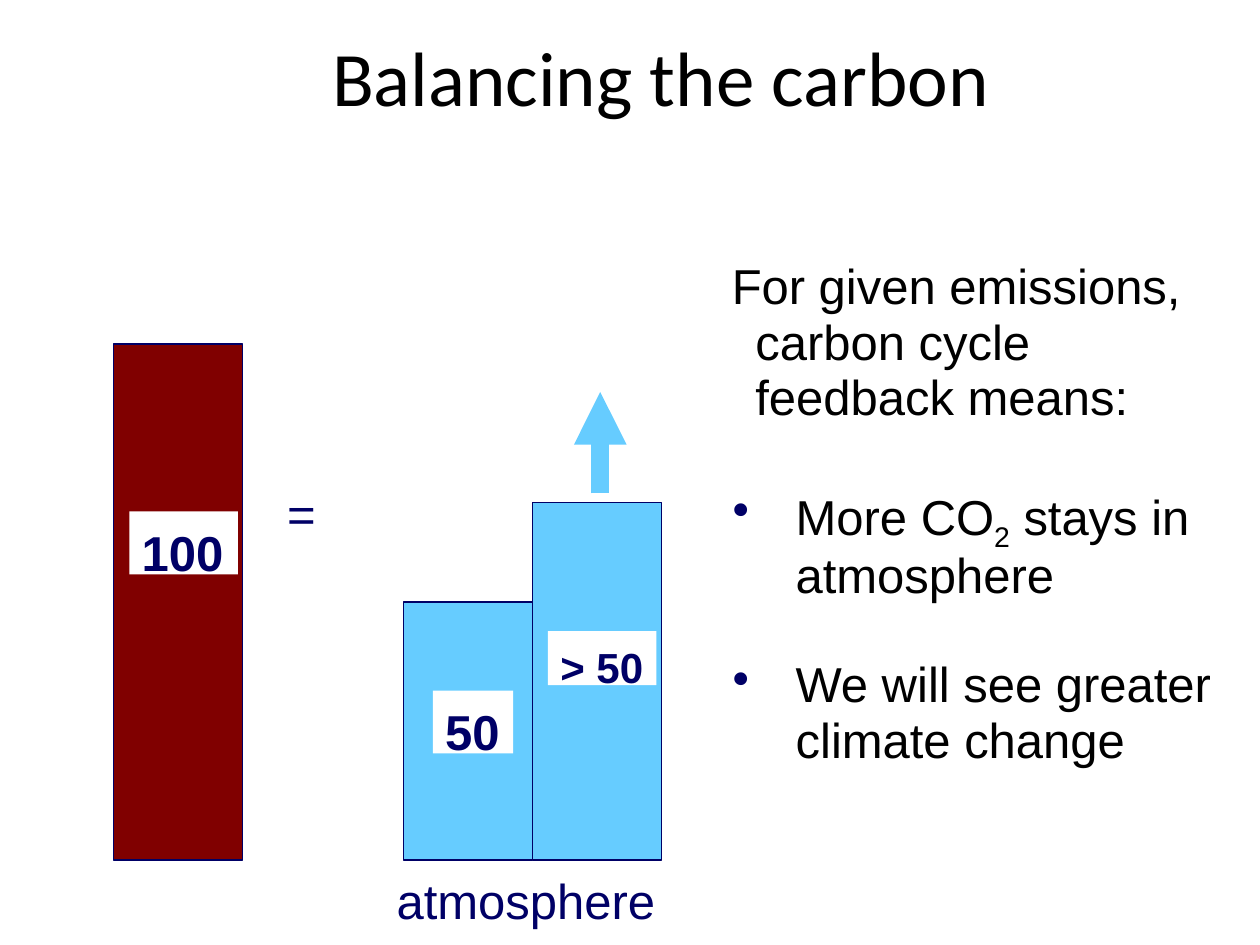
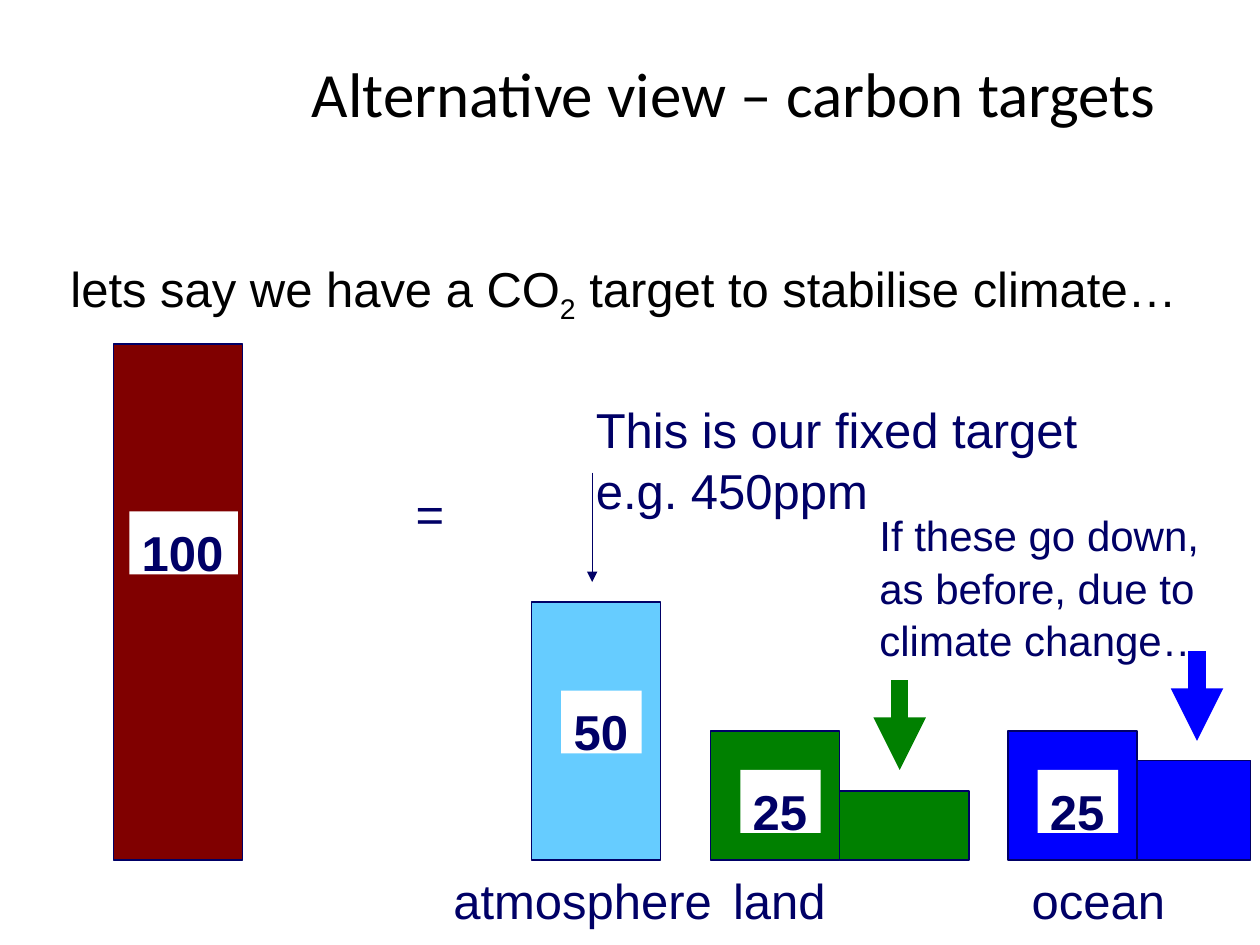
from dataclasses import dataclass

from lxml import etree
from pptx import Presentation
from pptx import util as u
from pptx.dml.color import RGBColor
from pptx.enum import shapes, text
from pptx.oxml.ns import qn

Pt = u.Pt

# Shared look
COLORS = {
    "text": "000000",
    "navy": "000066",
    "label": "FFFFFF",
    "emissions": "800000",
    "atmosphere": "66CCFF",
    "land": "008000",
    "ocean": "0000FF",
}
BASELINE = 491.5
BAR_WIDTH = 73.8
POINTS_PER_UNIT = 2.95
LABEL_SHIFT = 3
CAPTION_TOP = 491
NOTE_SPACING = 1.04
BODY_SPACING = 0.94


@dataclass
class Bar:
    left: float
    value: float
    color: str
    label: str = ""
    label_top: float = 0
    label_width: float = 46
    label_size: float = 28
    width: float = BAR_WIDTH


@dataclass
class Note:
    words: str
    left: float
    top: float
    width: float
    height: float = 36
    size: float = 28
    wrap: bool = False


@dataclass
class Arrow:
    x: float
    start: float
    end: float
    color: str
    weight: float = 10


@dataclass
class BodyItem:
    words: str  # "CO2" is set with a subscript
    margin: float
    indent: float = 0
    before: float = 0
    bullet: bool = False


def rgb(name: str) -> RGBColor:
    return RGBColor.from_string(COLORS[name])


def set_font(p, size: float, color: str, name: str = "Arial", bold: bool = False) -> None:
    f = p.font
    f.size, f.name, f.bold = Pt(size), name, bold
    f.color.rgb = rgb(color)


def add_box(s, left: float, top: float, width: float, height: float, wrap: bool = True):
    sp = s.shapes.add_textbox(Pt(left), Pt(top), Pt(width), Pt(height))
    sp.text_frame.word_wrap = wrap
    return sp.text_frame


def add_rect(s, left: float, top: float, width: float, height: float, color: str):
    sp = s.shapes.add_shape(shapes.MSO_SHAPE.RECTANGLE, Pt(left), Pt(top), Pt(width), Pt(height))
    sp.shadow.inherit = False
    sp.fill.solid()
    sp.fill.fore_color.rgb = rgb(color)
    return sp


def fill_note(tf, words: str, size: float, bold: bool = False) -> None:
    tf.margin_top = Pt(5)
    tf.text = words
    for p in tf.paragraphs:
        p.alignment = text.PP_ALIGN.LEFT
        p.line_spacing = NOTE_SPACING
        set_font(p, size, "navy", bold=bold)


def add_title(s, words: str, size: float, left: float, top: float, width: float, height: float) -> None:
    tf = add_box(s, left, top, width, height)
    tf.vertical_anchor = text.MSO_ANCHOR.MIDDLE
    p = tf.paragraphs[0]
    p.text = words
    p.alignment = text.PP_ALIGN.CENTER
    set_font(p, size, "text", "Calibri")


def add_bar(s, bar: Bar) -> None:
    height = bar.value * POINTS_PER_UNIT
    sp = add_rect(s, bar.left, BASELINE - height, bar.width, height, bar.color)
    sp.line.color.rgb = rgb("navy")
    sp.line.width = Pt(0.75)
    if bar.label:
        left = bar.left + (bar.width - bar.label_width) / 2 + LABEL_SHIFT
        label = add_rect(s, left, bar.label_top, bar.label_width, bar.label_size * 9 / 7, "label")
        label.line.fill.background()
        tf = label.text_frame
        tf.word_wrap = False
        tf.vertical_anchor = text.MSO_ANCHOR.TOP
        fill_note(tf, bar.label, bar.label_size, bold=True)


def add_note(s, note: Note) -> None:
    tf = add_box(s, note.left, note.top, note.width, note.height, note.wrap)
    fill_note(tf, note.words, note.size)


def add_arrow(s, arrow: Arrow) -> None:
    c = s.shapes.add_connector(
        shapes.MSO_CONNECTOR.STRAIGHT, Pt(arrow.x), Pt(arrow.start), Pt(arrow.x), Pt(arrow.end))
    c.line.color.rgb = rgb(arrow.color)
    c.line.width = Pt(arrow.weight)
    etree.SubElement(c.line._get_or_add_ln(), qn("a:tailEnd"), type="triangle")
    etree.SubElement(c._element.spPr, qn("a:effectLst"))


def add_body(s, items: list[BodyItem], left: float, top: float, width: float, height: float) -> None:
    tf = add_box(s, left, top, width, height)
    for i, item in enumerate(items):
        p = tf.add_paragraph() if i else tf.paragraphs[0]
        p.line_spacing = BODY_SPACING
        p.space_before = Pt(item.before)
        set_font(p, 28, "text")
        pPr = p._p.get_or_add_pPr()
        pPr.set("marL", str(Pt(item.margin)))
        pPr.set("indent", str(Pt(item.indent)))
        if item.bullet:
            # Bullet elements go before the default run properties
            color = etree.Element(qn("a:buClr"))
            etree.SubElement(color, qn("a:srgbClr"), val=COLORS["navy"])
            mark = etree.Element(qn("a:buChar"), char="•")
            for element in (color, mark):
                pPr.find(qn("a:defRPr")).addprevious(element)
        before, found, after = item.words.partition("CO2")
        parts = [before + "CO", "2", after] if found else [before]
        for n, words in enumerate(parts):
            r = p.add_run()
            r.text = words
            if n == 1:
                r.font._element.set("baseline", "-25000")


def add_balance_slide(prs, blank) -> None:
    s = prs.slides.add_slide(blank)
    add_title(s, "Balancing the carbon", 44, 131.8, 8.6, 491.8, 69.8)
    left = 230.4
    for bar in (
        Bar(65, 100, "emissions", "100", 292.3, 62),
        Bar(left, 50, "atmosphere", "50", 394.6),
        Bar(left + BAR_WIDTH, 69.3, "atmosphere", "> 50", 360.7, 62, 24),
    ):
        add_bar(s, bar)
    add_note(s, Note("=", 157, 270, 31))
    add_note(s, Note("atmosphere", 219.6, CAPTION_TOP, 164))
    add_arrow(s, Arrow(343, 282, 224, "atmosphere"))
    add_body(s, [
        BodyItem("For given emissions, carbon cycle feedback means:", 13.5, -13.5),
        BodyItem("More CO2 stays in atmosphere", 36.5, -36, 34, True),
        BodyItem("We will see greater climate change", 36.5, -36, 31, True),
    ], 411.1, 145.4, 295.2, 351.4)


def add_target_slide(prs, blank) -> None:
    s = prs.slides.add_slide(blank)
    add_title(s, "Alternative view – carbon targets", 36, 161.3, 26.6, 516.2, 51.8)
    land, ocean = 406.1, 576
    for bar in (
        Bar(65, 100, "emissions", "100", 292.3, 62),
        Bar(303.8, 50, "atmosphere", "50", 394.6),
        Bar(land, 25, "land", "25", 440),
        Bar(ocean, 25, "ocean", "25", 440),
        Bar(land + BAR_WIDTH, 13.4, "land"),
        Bar(ocean + BAR_WIDTH, 19.3, "ocean", width=65),
    ):
        add_bar(s, bar)
    add_body(s, [BodyItem("lets say we have a CO2 target to stabilise climate…", 8)],
             25.2, 144, 674.6, 86.4)
    for note in (
        Note("=", 230.4, 270, 31),
        Note("atmosphere", 252, CAPTION_TOP, 164),
        Note("land", 411.8, CAPTION_TOP, 68),
        Note("ocean", 582.5, CAPTION_TOP, 91),
        Note("This is our fixed target\ne.g. 450ppm", 333.4, 221.8, 293, 65),
        Note("If these go down, as before, due to climate change…",
             495.4, 285.1, 206, 81, 24, True),
    ):
        add_note(s, note)
    for arrow in (
        Arrow(338.4, 270, 332.6, "navy", 0.75),
        Arrow(514.1, 388.8, 440, "land"),
        Arrow(684, 372.2, 423.4, "ocean"),
    ):
        add_arrow(s, arrow)


def main() -> None:
    prs = Presentation()
    prs.slide_width, prs.slide_height = Pt(720), Pt(540)
    blank = prs.slide_layouts[6]
    add_balance_slide(prs, blank)
    add_target_slide(prs, blank)
    prs.save("out.pptx")


if __name__ == "__main__":
    main()
